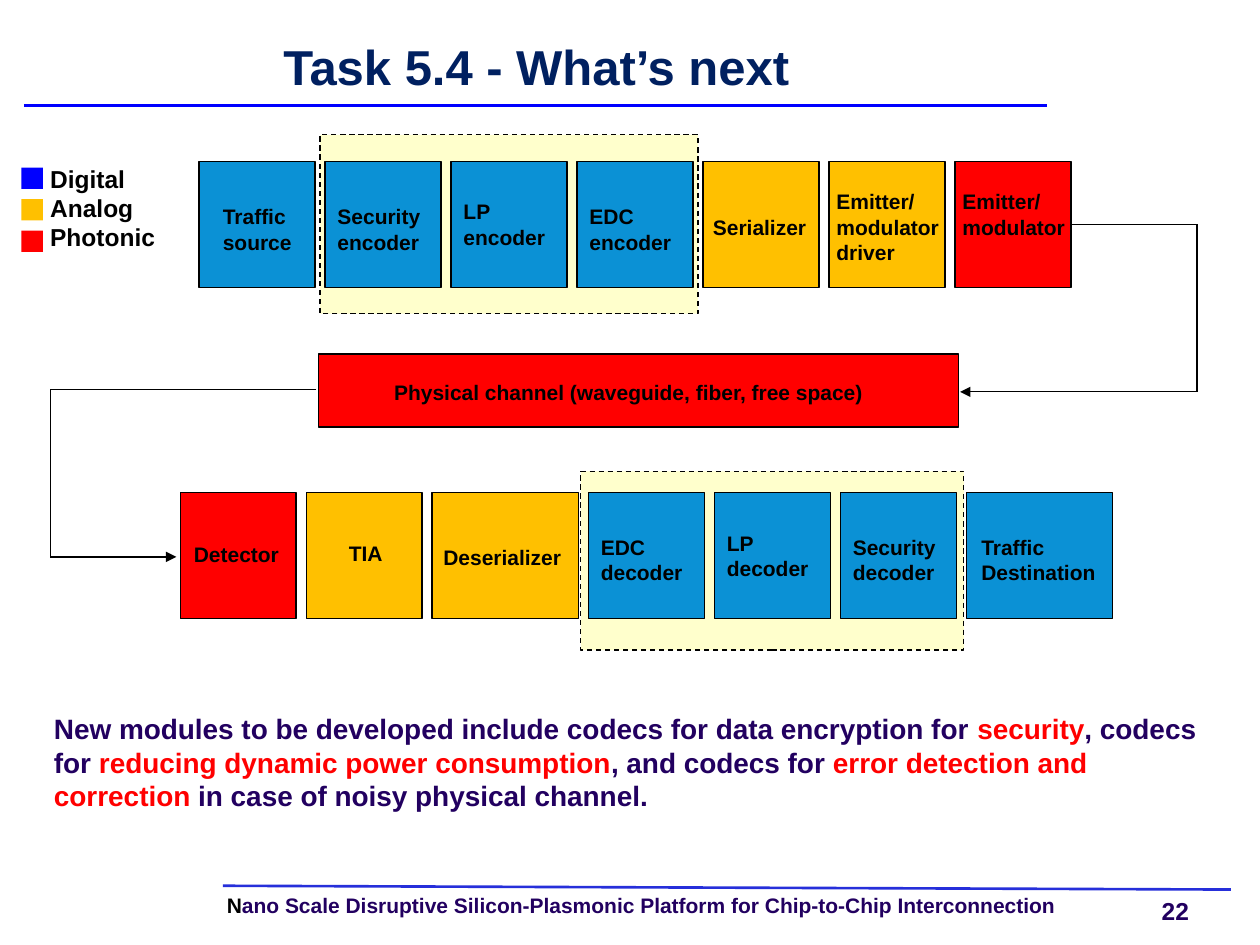
from dataclasses import dataclass

from lxml import etree
from pptx import Presentation
from pptx.dml.color import RGBColor
from pptx.enum.dml import MSO_LINE
from pptx.enum.shapes import MSO_CONNECTOR, MSO_SHAPE
from pptx.enum.text import MSO_ANCHOR, PP_ALIGN
from pptx.oxml.ns import qn
from pptx.util import Pt

RECT = MSO_SHAPE.RECTANGLE
STRAIGHT = MSO_CONNECTOR.STRAIGHT
DASH = MSO_LINE.DASH
MIDDLE = MSO_ANCHOR.MIDDLE
LEFT, CENTER = PP_ALIGN.LEFT, PP_ALIGN.CENTER
EMU_PER_PX = 9144


@dataclass(frozen=True)
class Theme:
    """Colours, font and type sizes of the slide."""
    font: str = "Arial"
    ink: str = "000000"
    title: str = "002060"
    body: str = "220060"
    blue: str = "0000FF"
    footer_rule: str = "262FDA"
    digital: str = "0B91D5"
    analog: str = "FFC000"
    photonic: str = "FF0000"
    group: str = "FFFFCC"
    title_pt: int = 28
    body_pt: int = 16
    legend_pt: int = 14
    label_pt: int = 12
    thin: float = 0.75
    thick: float = 1.5


T = Theme()

TRANSMITTER = [
    (["Traffic source"], T.digital, 92, (9, 29, 79)),
    (["Security encoder"], T.digital, 92, (0, 29, 92)),
    (["LP encoder"], T.digital, 92, (0, 25, 92)),
    (["EDC encoder"], T.digital, 92, (0, 29, 92)),
    (["Serializer"], T.analog, 92, (-2, 37, 100)),
    (["Emitter/", "modulator driver"], T.analog, 92, (-4, 17, 108)),
    (["Emitter/", "modulator"], T.photonic, 92, (-4, 17, 108)),
]
RECEIVER = [
    (["Detector"], T.photonic, 92, (1, 34, 88)),
    (["TIA"], T.analog, 92, (24, 33, 58)),
    (["Deserializer"], T.analog, 116, (-1, 36, 132)),
    (["EDC decoder"], T.digital, 92, (0, 28, 92)),
    (["LP decoder"], T.digital, 92, (0, 25, 92)),
    (["Security decoder"], T.digital, 92, (0, 28, 92)),
    (["Traffic Destination"], T.digital, 116, (2, 28, 147)),
]
SUMMARY = [
    ("New modules to be developed include codecs for data encryption for ", T.body),
    ("security", T.photonic),
    (", codecs for ", T.body),
    ("reducing dynamic power consumption", T.photonic),
    (", and codecs for ", T.body),
    ("error detection and correction", T.photonic),
    (" in case of noisy physical channel.", T.body),
]


def px(*values):
    """Turn px lengths into EMU."""
    return [round(v * EMU_PER_PX) for v in values]


def add_rect(s, box, fill, line=True, dash=None):
    """Draw a filled rectangle, outlined unless line is False."""
    sp = s.shapes.add_shape(RECT, *px(*box))
    sp.shadow.inherit = False
    sp.fill.solid()
    sp.fill.fore_color.rgb = RGBColor.from_string(fill)
    if line:
        sp.line.color.rgb = RGBColor.from_string(T.ink)
        sp.line.width = Pt(T.thin)
        if dash:
            sp.line.dash_style = dash
    else:
        sp.line.fill.background()


def add_text(s, box, paragraphs, size, color=T.ink, align=LEFT, inset=True, wrap=True):
    """Write bold paragraphs, each a string or a list of (text, colour) runs."""
    tf = s.shapes.add_textbox(*px(*box)).text_frame
    tf.word_wrap = wrap
    if not inset:
        tf.margin_left = tf.margin_top = tf.margin_right = tf.margin_bottom = 0
    for i, content in enumerate(paragraphs):
        p = tf.add_paragraph() if i else tf.paragraphs[0]
        p.alignment = align
        p.font.name, p.font.size, p.font.bold = T.font, Pt(size), True
        if isinstance(content, str):
            p.font.color.rgb = RGBColor.from_string(color)
            p.add_run().text = content
        else:
            for text, run_color in content:
                r = p.add_run()
                r.text = text
                r.font.color.rgb = RGBColor.from_string(run_color)
    return tf


def add_line(s, start, end, color, width, arrow=False):
    """Draw a straight connector, with an arrowhead at its end if asked."""
    c = s.shapes.add_connector(STRAIGHT, *px(*start, *end))
    c.line.color.rgb = RGBColor.from_string(color)
    c.line.width = Pt(width)
    if arrow:
        etree.SubElement(c.line._get_or_add_ln(), qn("a:tailEnd"), type="triangle")
    etree.SubElement(c._element.spPr, qn("a:effectLst"))


def add_route(s, points):
    """Join points with thin lines, the last one ending in an arrowhead."""
    last = len(points) - 2
    for i, (start, end) in enumerate(zip(points, points[1:])):
        add_line(s, start, end, T.ink, T.thin, arrow=i == last)


def add_header(s, x, y, w, h):
    """Place the title over its rule."""
    tf = add_text(s, (x, y, w, h), ["Task 5.4 - What’s next"], T.title_pt,
                  T.title, CENTER, inset=False)
    tf.vertical_anchor = MIDDLE
    tf.paragraphs[0].line_spacing = Pt(32)
    add_line(s, (x - 1, y + 64), (x + w, y + 64), T.blue, T.thick)


def add_legend(s, x, y):
    """Place the colour key."""
    add_text(s, (x + 13, y - 8, 200, 83), ["Digital", "Analog", "Photonic"], T.legend_pt)
    for i, color in enumerate((T.blue, T.analog, T.photonic)):
        add_rect(s, (x, y + 25 * i, 17, 17), color, line=False)


def add_chain(s, x, y, modules, group):
    """Place a row of modules over the dashed group given relative to the row."""
    dx, dy, w, h = group
    add_rect(s, (x + dx, y + dy, w, h), T.group, dash=DASH)
    for paragraphs, color, width, (tx, ty, tw) in modules:
        add_rect(s, (x, y, width, 100), color)
        add_text(s, (x + tx, y + ty, tw, 47), paragraphs, T.label_pt)
        x += width + 8


def add_channel(s, x, y, w, h):
    """Place the physical channel bar."""
    add_rect(s, (x, y, w, h), T.photonic)
    add_text(s, (x + 50, y + 15, 414, 28),
             ["Physical channel (waveguide, fiber, free space)"], T.label_pt)


def add_footer(s, x, y, w):
    """Place the footer rule, project name and page number."""
    add_line(s, (x, y), (x + w, y + 3), T.footer_rule, T.thick)
    name = [("N", T.ink),
            ("ano Scale Disruptive Silicon-Plasmonic Platform for Chip-to-Chip Interconnection",
             T.body)]
    tf = add_text(s, (x + 3, y + 8, 714, 18), [name], T.label_pt, inset=False)
    tf.paragraphs[0].line_spacing = 0.9
    add_text(s, (x + 745, y + 8, 40, 23), ["22"], T.legend_pt, T.body,
             inset=False, wrap=False)


def main():
    """Build the slide and save it."""
    prs = Presentation()
    prs.slide_width, prs.slide_height = px(1000, 750)
    s = prs.slides.add_slide(prs.slide_layouts[6])
    add_header(s, 20, 20, 811, 67)
    add_legend(s, 17, 133)
    add_chain(s, 158, 128, TRANSMITTER, (96, -21, 300, 142))
    add_channel(s, 253, 281, 508, 58)
    add_chain(s, 143, 391, RECEIVER, (318, -17, 304, 142))
    add_route(s, [(850, 178), (950, 178), (950, 311), (762, 311)])
    add_route(s, [(251, 309), (40, 309), (40, 442), (140, 442)])
    add_text(s, (33, 560, 940, 91), [SUMMARY], T.body_pt)
    add_footer(s, 177, 703, 800)
    prs.save("out.pptx")


if __name__ == "__main__":
    main()
